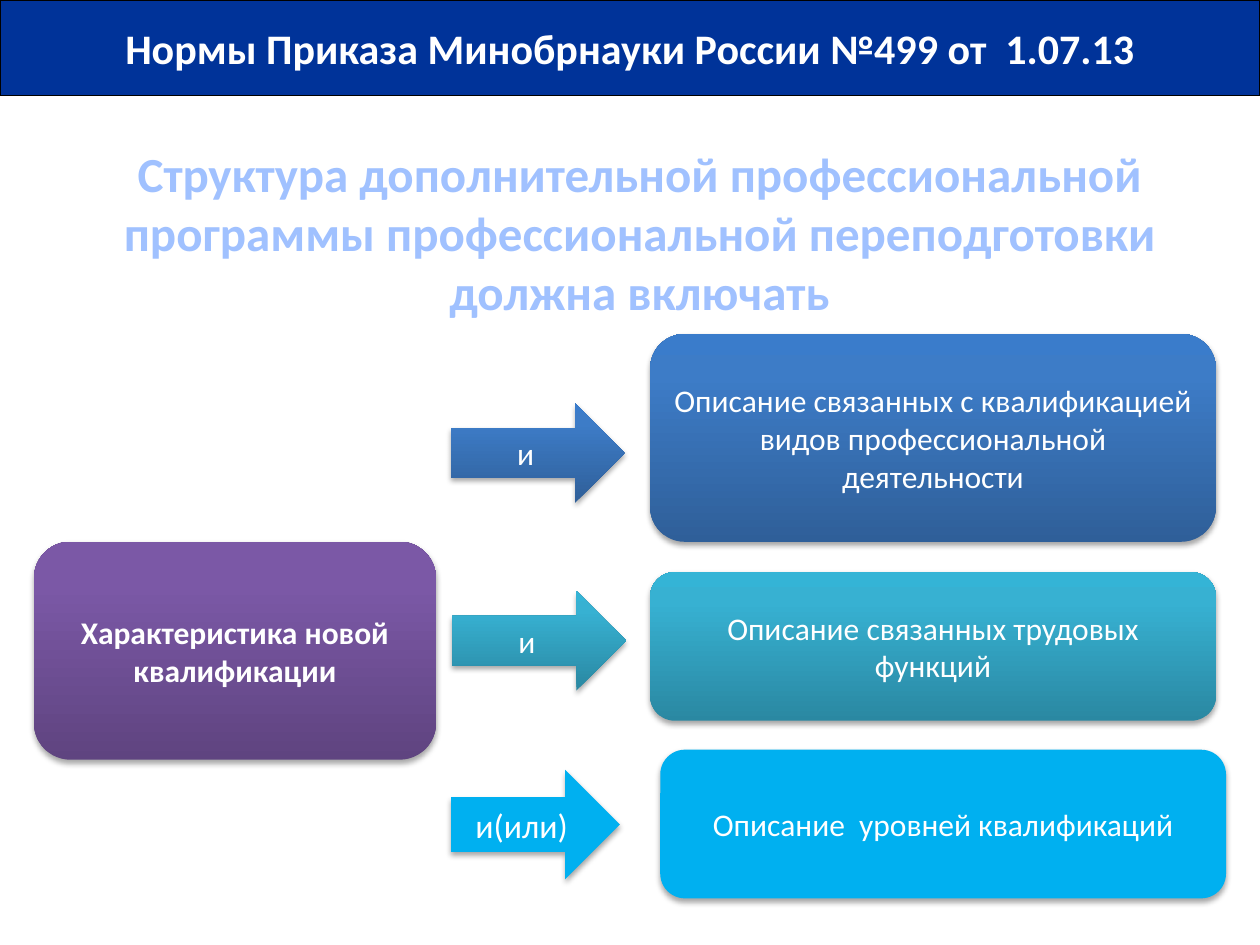
import copy
from dataclasses import dataclass
from typing import Optional

import pptx
import pptx.dml.color
import pptx.enum.dml
import pptx.enum.shapes
import pptx.enum.text
import pptx.oxml
import pptx.oxml.ns
import pptx.util

Inches = pptx.util.Inches
Shape = pptx.enum.shapes.MSO_SHAPE
Anchor = pptx.enum.text.MSO_ANCHOR
AutoSize = pptx.enum.text.MSO_AUTO_SIZE


@dataclass(frozen=True)
class Theme:
    font: str = "Calibri"
    banner: str = "003399"
    border: str = "000000"
    heading: str = "A0C1FF"
    light: str = "FFFFFF"
    # Block fills, from bottom to top; a single colour is a solid fill
    purple: tuple[str, ...] = ("5F4480", "7B58A6", "7C57A8")
    blue: tuple[str, ...] = ("2F5F99", "3D7CC7", "3A7CCB")
    teal: tuple[str, ...] = ("2A88A2", "37B1D2", "34B4D6")
    sky: tuple[str, ...] = ("00B0F0",)
    stops: tuple[float, ...] = (0, 0.8, 1)
    banner_size: float = 24
    heading_size: float = 28
    body_size: float = 18
    wide_arrow_size: float = 19.3


THEME = Theme()


@dataclass(frozen=True)
class Block:
    text: str
    left: float
    top: float
    width: float
    height: float
    colours: tuple[str, ...]
    size: float = THEME.body_size
    bold: Optional[bool] = None


def colour(code: str) -> pptx.dml.color.RGBColor:
    return pptx.dml.color.RGBColor.from_string(code)


def write(shape, text: str, size: float, code: str, bold: Optional[bool] = None) -> None:
    """Put one centred paragraph into a shape."""
    para = shape.text_frame.paragraphs[0]
    para.text = text
    para.alignment = pptx.enum.text.PP_ALIGN.CENTER
    para.font.name = THEME.font
    para.font.size = pptx.util.Pt(size)
    para.font.bold = bold
    para.font.color.rgb = colour(code)


def paint(shape, colours: tuple[str, ...]) -> None:
    """Fill a shape with one colour or with a vertical gradient."""
    if len(colours) == 1:
        shape.fill.solid()
        shape.fill.fore_color.rgb = colour(colours[0])
        return
    shape.fill.gradient()
    shape.fill.gradient_angle = 90
    stop_list = next(shape._element.iter(pptx.oxml.ns.qn("a:gsLst")))
    stop_list.append(copy.deepcopy(stop_list[-1]))
    for stop, code, position in zip(shape.fill.gradient_stops, colours, THEME.stops):
        stop.color.rgb = colour(code)
        stop.position = position


def add_shadow(shape) -> None:
    """Give a shape a soft shadow below it."""
    shape.shadow.inherit = False
    effects = next(shape._element.iter(pptx.oxml.ns.qn("a:effectLst")))
    effects.append(pptx.oxml.parse_xml(
        f'<a:outerShdw {pptx.oxml.ns.nsdecls("a")} blurRad="40000" dist="23000" '
        'dir="5400000" rotWithShape="0"><a:srgbClr val="000000">'
        '<a:alpha val="35000"/></a:srgbClr></a:outerShdw>'
    ))


def add_block(page, kind: Shape, block: Block) -> None:
    shape = page.shapes.add_shape(
        kind, Inches(block.left), Inches(block.top), Inches(block.width), Inches(block.height)
    )
    paint(shape, block.colours)
    shape.line.fill.background()
    add_shadow(shape)
    shape.text_frame.word_wrap = True
    shape.text_frame.vertical_anchor = Anchor.MIDDLE
    write(shape, block.text, block.size, THEME.light, block.bold)


def add_banner(page, text: str) -> None:
    banner = page.shapes.title
    banner.left, banner.top = Inches(0), Inches(0)
    banner.width, banner.height = Inches(10), Inches(0.76)
    paint(banner, (THEME.banner,))
    banner.line.color.rgb = colour(THEME.border)
    banner.line.width = pptx.util.Pt(0.75)
    banner.text_frame.auto_size = AutoSize.NONE
    banner.text_frame.word_wrap = False
    banner.text_frame.vertical_anchor = Anchor.MIDDLE
    write(banner, text, THEME.banner_size, THEME.light, True)


def add_heading(page, text: str) -> None:
    box = page.shapes.add_textbox(Inches(0.47), Inches(1.09), Inches(9.21), Inches(1.51))
    box.text_frame.word_wrap = True
    box.text_frame.auto_size = AutoSize.SHAPE_TO_FIT_TEXT
    write(box, text, THEME.heading_size, THEME.heading, True)


# Rounded boxes: the subject on the left, its parts on the right
BOXES = (
    Block("Характеристика новой квалификации", 0.27, 4.3, 3.19, 1.73, THEME.purple, bold=True),
    Block("Описание связанных с квалификацией видов профессиональной деятельности",
          5.16, 2.65, 4.49, 1.65, THEME.blue),
    Block("Описание связанных трудовых функций", 5.16, 4.54, 4.49, 1.18, THEME.teal),
    Block("Описание  уровней квалификаций", 5.24, 5.95, 4.49, 1.18, THEME.sky),
)

# Arrows that lead to the parts
ARROWS = (
    Block("и", 3.58, 3.2, 1.38, 0.79, THEME.blue),
    Block("и", 3.59, 4.69, 1.38, 0.79, THEME.teal),
    Block("и(или)", 3.58, 6.11, 1.34, 0.87, THEME.sky, THEME.wide_arrow_size),
)


def main() -> None:
    deck = pptx.Presentation()
    deck.slide_width, deck.slide_height = Inches(10), Inches(7.5)
    page = deck.slides.add_slide(deck.slide_layouts.get_by_name("Title Only"))

    add_banner(page, "Нормы Приказа Минобрнауки России №499 от  1.07.13")
    add_heading(page, "Структура дополнительной профессиональной программы "
                      "профессиональной переподготовки должна включать")
    for kind, blocks in ((Shape.ROUNDED_RECTANGLE, BOXES), (Shape.RIGHT_ARROW, ARROWS)):
        for block in blocks:
            add_block(page, kind, block)

    deck.save("out.pptx")


if __name__ == "__main__":
    main()
